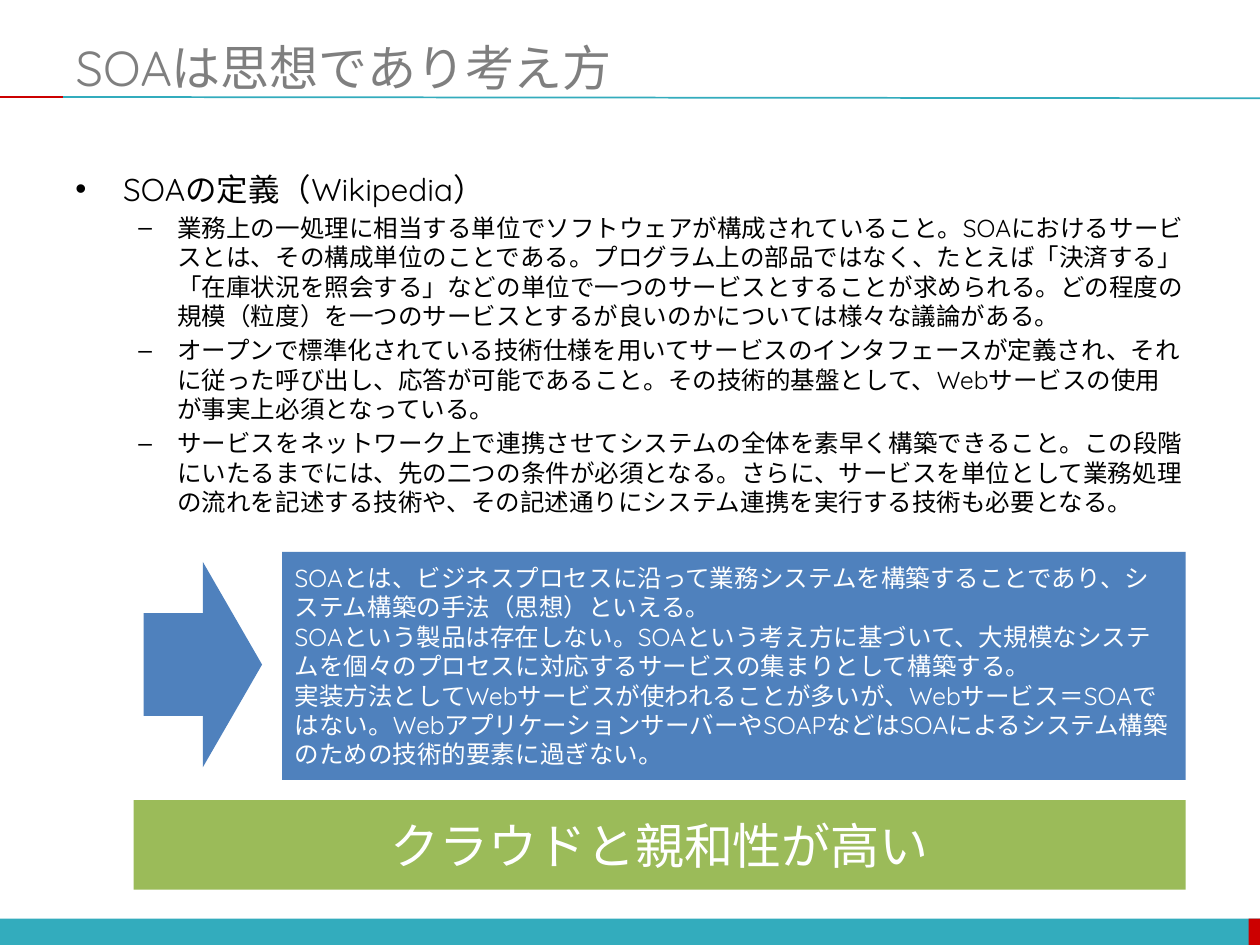
import pptx
import pptx.dml.color
import pptx.enum.shapes
import pptx.enum.text
import pptx.oxml.ns
import pptx.util
from lxml import etree

W, H = 10, 7.5
TEAL, RED, BLUE, GREEN = "33ACBD", "CC0000", "4F81BD", "9BBB59"
GREY, BLACK, WHITE = "7F7F7F", "000000", "FFFFFF"
SHAPE = pptx.enum.shapes.MSO_SHAPE
ALIGN = pptx.enum.text.PP_ALIGN
ANCHOR = pptx.enum.text.MSO_ANCHOR
inch = pptx.util.Inches

DEFINITION = [
    "業務上の一処理に相当する単位でソフトウェアが構成されていること。SOAにおけるサービスとは、その構成単位のことである。プログラム上の部品ではなく、たとえば「決済する」「在庫状況を照会する」などの単位で一つのサービスとすることが求められる。どの程度の規模（粒度）を一つのサービスとするが良いのかについては様々な議論がある。",
    "オープンで標準化されている技術仕様を用いてサービスのインタフェースが定義され、それに従った呼び出し、応答が可能であること。その技術的基盤として、Webサービスの使用が事実上必須となっている。",
    "サービスをネットワーク上で連携させてシステムの全体を素早く構築できること。この段階にいたるまでには、先の二つの条件が必須となる。さらに、サービスを単位として業務処理の流れを記述する技術や、その記述通りにシステム連携を実行する技術も必要となる。",
]
SUMMARY = [
    "SOAとは、ビジネスプロセスに沿って業務システムを構築することであり、システム構築の手法（思想）といえる。",
    "SOAという製品は存在しない。SOAという考え方に基づいて、大規模なシステムを個々のプロセスに対応するサービスの集まりとして構築する。",
    "実装方法としてWebサービスが使われることが多いが、Webサービス＝SOAではない。WebアプリケーションサーバーやSOAPなどはSOAによるシステム構築のための技術的要素に過ぎない。",
]


def rgb(value):
    return pptx.dml.color.RGBColor.from_string(value)


def write(p, text, size, color, **formats):
    r = p.add_run()
    r.text = text
    r.font.name = "Quicksand"
    r.font.size = pptx.util.Pt(size)
    r.font.color.rgb = rgb(color)
    for name, value in formats.items():
        setattr(p, name, value)


def paragraphs(tf, count):
    """Return the first paragraph of the frame and as many new ones as needed."""
    return [tf.paragraphs[0]] + [tf.add_paragraph() for _ in range(count - 1)]


def add_block(s, kind, box, color):
    sp = s.shapes.add_shape(kind, *map(inch, box))
    sp.shadow.inherit = False
    sp.fill.solid()
    sp.fill.fore_color.rgb = rgb(color)
    sp.line.fill.background()
    if kind == SHAPE.ROUNDED_RECTANGLE:
        sp.adjustments[0] = 0
    return sp


def add_rule(s, start, end, color):
    line = s.shapes.add_connector(
        pptx.enum.shapes.MSO_CONNECTOR.STRAIGHT, *map(inch, start + end))
    line.line.color.rgb = rgb(color)
    line.line.width = pptx.util.Pt(1)
    etree.SubElement(line._element.spPr, pptx.oxml.ns.qn("a:effectLst"))


def set_bullet(p, char, left, hanging):
    pPr = p._p.get_or_add_pPr()
    pPr.set("marL", str(inch(left)))
    pPr.set("indent", str(inch(-hanging)))
    font = etree.SubElement(pPr, pptx.oxml.ns.qn("a:buFont"))
    font.set("typeface", "Arial")
    etree.SubElement(pPr, pptx.oxml.ns.qn("a:buChar")).set("char", char)


def add_footer(s, x, y, w, h):
    tip = 0.09
    add_block(s, SHAPE.RECTANGLE, (x, y, w, h), TEAL)
    add_block(s, SHAPE.RECTANGLE, (x + w - tip, y, tip, h), RED)


def add_heading(s, x, y, w, h, text):
    base = y + h + 0.01
    add_rule(s, (x, base), (W, base + 0.01), TEAL)
    add_rule(s, (0, base), (x, base), RED)
    title = s.shapes.title
    title.left, title.top, title.width, title.height = map(inch, (x, y, w, h))
    tf = title.text_frame
    tf.auto_size = pptx.enum.text.MSO_AUTO_SIZE.NONE
    tf.vertical_anchor = ANCHOR.MIDDLE
    write(tf.paragraphs[0], text, 28, GREY, alignment=ALIGN.LEFT)


def add_definition(s, x, y, w, h):
    tf = s.shapes.add_textbox(*map(inch, (x, y, w, h))).text_frame
    tf.word_wrap = True
    head, *items = paragraphs(tf, 1 + len(DEFINITION))
    set_bullet(head, "•", 0.38, 0.38)
    write(head, "SOAの定義（Wikipedia）", 18, BLACK)
    for p, text in zip(items, DEFINITION):
        set_bullet(p, "–", 0.81, 0.31)
        write(p, text, 14, BLACK, level=1, space_before=pptx.util.Pt(2.8))


def add_panel(s, box, color, texts, size, align):
    tf = add_block(s, SHAPE.ROUNDED_RECTANGLE, box, color).text_frame
    tf.word_wrap = True
    tf.vertical_anchor = ANCHOR.MIDDLE
    for p, text in zip(paragraphs(tf, len(texts)), texts):
        write(p, text, size, WHITE, alignment=align)


def add_conclusion(s, x, y, w, h):
    """Arrow and summary panel above a full-width banner."""
    indent, panel_h, banner_h = 1.18, 1.81, 0.71
    add_panel(s, (x + indent, y, w - indent, panel_h), BLUE, SUMMARY, 14, ALIGN.LEFT)
    add_block(s, SHAPE.RIGHT_ARROW,
              (x + 0.08, y + 0.08, indent - 0.24, panel_h - 0.18), BLUE)
    add_panel(s, (x, y + h - banner_h, w, banner_h), GREEN,
              ["クラウドと親和性が高い"], 28, ALIGN.CENTER)


def main():
    prs = pptx.Presentation()
    prs.slide_width, prs.slide_height = inch(W), inch(H)
    s = prs.slides.add_slide(prs.slide_layouts[5])
    add_footer(s, 0, 7.29, W, 0.22)
    add_heading(s, 0.5, 0.3, 9.5, 0.46, "SOAは思想であり考え方")
    add_definition(s, 0.5, 1.3, 9, 4.95)
    add_conclusion(s, 1.06, 4.38, 8.35, 2.68)
    prs.save("out.pptx")


if __name__ == "__main__":
    main()
